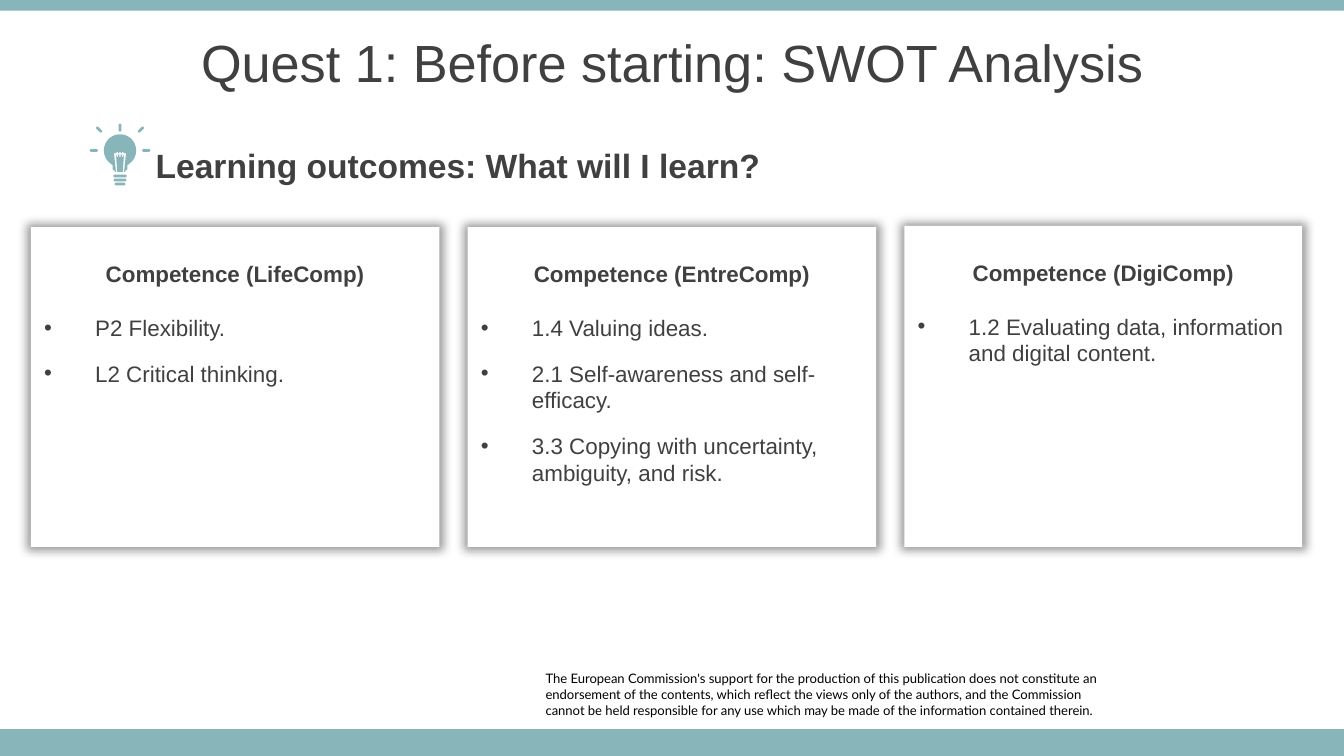
"""Build the learning outcomes slide for the SWOT analysis quest."""
import math

import lxml.etree
import pptx
import pptx.dml.color
import pptx.enum.shapes
import pptx.enum.text
import pptx.oxml.ns
import pptx.util

RGBColor = pptx.dml.color.RGBColor
TEAL = RGBColor(0x87, 0xB5, 0xBA)
GRAY = RGBColor(0x40, 0x40, 0x40)
BLACK = RGBColor(0, 0, 0)
WHITE = RGBColor(255, 255, 255)
ALIGN = pptx.enum.text.PP_ALIGN
ANCHOR = pptx.enum.text.MSO_ANCHOR
RECT = pptx.enum.shapes.MSO_SHAPE.RECTANGLE
Inches = pptx.util.Inches
Pt = pptx.util.Pt

W = 10
H = W * 9 / 16
TITLE = "Quest 1: Before starting: SWOT Analysis"
SUBTITLE = "Learning outcomes: What will I learn?"
DISCLAIMER = [
    "The European Commission's support for the production of this publication does not "
    "constitute an endorsement of the contents, which reflect the views only of the authors, "
    "and the Commission",
    "cannot be held responsible for any use which may be made of the information contained "
    "therein.",
]
CARDS = [
    ("Competence (LifeComp)", ["P2 Flexibility.", "L2 Critical thinking."], 1.69, 3.04),
    ("Competence (EntreComp)",
     ["1.4 Valuing ideas.", "2.1 Self-awareness and self-efficacy.",
      "3.3 Copying with uncertainty, ambiguity, and risk."], 1.69, 3.04),
    ("Competence (DigiComp)",
     ["1.2 Evaluating data, information and digital content."], 1.68, 2.96),
]
CARD_LEFT, CARD_PITCH, CARD_BOTTOM = 0.23, 3.25, 4.07
LINE = 14.3

BULB_X, BULB_Y, BULB_R = 89.3, 112, 12
NECK = [(5.5, 123), (5.5, 126), (3, 128)]
FILAMENT = [(0.5, 113), (0.5, 114), (1.5, 114), (1.5, 113), (2.5, 113), (2.5, 114),
            (4.5, 114), (3, 128), (2, 128), (3, 115), (2.5, 115), (2.5, 117),
            (1.5, 117), (1.5, 115), (0.5, 115), (0.5, 117)]
BASE = [(131, 10), (134, 9.5), (137, 8)]
RAYS = [(0, 19.5, 6), (45, 22, 5.5), (90, 17, 6), (135, 22, 5.5), (180, 19.5, 6)]
FINE = 100


def add_text(tf, text, first=False, size=12, color=GRAY, font="Arial", bold=False,
             align=ALIGN.LEFT, after=0, bullet=False):
    p = tf.paragraphs[0] if first else tf.add_paragraph()
    p.alignment = align
    p.space_after = Pt(after)
    if bullet:
        pPr = p._p.get_or_add_pPr()
        pPr.set("marL", str(Inches(0.38)))
        pPr.set("indent", str(-Inches(0.38)))
        lxml.etree.SubElement(pPr, pptx.oxml.ns.qn("a:buFont"), typeface="Arial")
        lxml.etree.SubElement(pPr, pptx.oxml.ns.qn("a:buChar"), char="•")
    r = p.add_run()
    r.text = text
    r.font.size, r.font.name, r.font.bold = Pt(size), font, bold
    r.font.color.rgb = color


def add_box(slide, x, y, w, h, anchor=ANCHOR.MIDDLE):
    tf = slide.shapes.add_textbox(*map(Inches, (x, y, w, h))).text_frame
    tf.word_wrap = True
    tf.vertical_anchor = anchor
    return tf


def paint(sp, color):
    sp.fill.solid()
    sp.fill.fore_color.rgb = color
    sp.line.fill.background()
    sp.shadow.inherit = False
    return sp


def add_rect(slide, x, y, w, h, color):
    return paint(slide.shapes.add_shape(RECT, *map(Inches, (x, y, w, h))), color)


def add_glow(sp):
    qn = pptx.oxml.ns.qn
    effects = sp._element.spPr.find(qn("a:effectLst"))
    shadow = lxml.etree.SubElement(effects, qn("a:outerShdw"), blurRad=str(Pt(5)),
                                   sx="102000", sy="102000", algn="ctr",
                                   rotWithShape="0")
    color = lxml.etree.SubElement(shadow, qn("a:srgbClr"), val=str(BLACK))
    lxml.etree.SubElement(color, qn("a:alpha"), val="40000")


def pill(cx, cy, length, angle=0, thick=2):
    a, points = math.radians(angle), []
    for side in (1, -1):
        for turn in range(-90, 91, 30):
            t = math.radians(turn)
            u = side * (length / 2 - thick / 2 + thick / 2 * math.cos(t))
            v = side * thick / 2 * math.sin(t)
            points.append((cx + u * math.cos(a) - v * math.sin(a),
                           cy + u * math.sin(a) + v * math.cos(a)))
    return points


def mirrored(half):
    return ([(BULB_X - dx, y) for dx, y in half]
            + [(BULB_X + dx, y) for dx, y in reversed(half)])


def add_bulb(slide):
    arc = [(BULB_X + BULB_R * math.cos(math.radians(d)),
            BULB_Y + BULB_R * math.sin(math.radians(d))) for d in range(-225, 46, 6)]
    outlines = [arc + mirrored(NECK)[::-1], mirrored(FILAMENT)]
    outlines += [pill(BULB_X, y, length) for y, length in BASE]
    for angle, radius, length in RAYS:
        a = math.radians(angle)
        outlines.append(pill(BULB_X + radius * math.cos(a),
                             BULB_Y - radius * math.sin(a), length, -angle))
    outlines = [[(x * FINE, y * FINE) for x, y in points] for points in outlines]
    builder = slide.shapes.build_freeform(*outlines[0][0], scale=Inches(0.01) / FINE)
    for i, points in enumerate(outlines):
        if i:
            builder.move_to(*points[0])
        builder.add_line_segments(points[1:], close=True)
    paint(builder.convert_to_shape(), TEAL)


def add_card(slide, x, y, w, heading, items):
    sp = add_rect(slide, x, y, w, CARD_BOTTOM - y, WHITE)
    add_glow(sp)
    tf = sp.text_frame
    tf.word_wrap = True
    tf.vertical_anchor = ANCHOR.TOP
    tf.margin_top = Inches(0.05) + Pt(LINE)
    add_text(tf, heading, first=True, bold=True, align=ALIGN.CENTER, after=LINE)
    for item in items:
        add_text(tf, item, after=10, bullet=True)


def main():
    prs = pptx.Presentation()
    prs.slide_width, prs.slide_height = Inches(W), Inches(H)
    slide = prs.slides.add_slide(prs.slide_layouts[6])

    tf = add_box(slide, 4.06, 4.99, 4.17, 0.35, ANCHOR.TOP)
    tf.margin_left = tf.margin_right = tf.margin_top = tf.margin_bottom = 0
    for i, text in enumerate(DISCLAIMER):
        add_text(tf, text, first=i == 0, size=7, color=BLACK, font="Lato")

    add_rect(slide, 0, H - 0.2, W, 0.2, TEAL)
    add_rect(slide, 0, 0, W, 0.08, TEAL)
    add_text(add_box(slide, 0, 0.14, W, 0.63), TITLE, first=True, size=28,
             align=ALIGN.CENTER)
    add_bulb(slide)
    add_text(add_box(slide, 1.06, 1.07, 4.88, 0.31), SUBTITLE, first=True, size=18,
             bold=True)
    for i, (heading, items, top, width) in enumerate(CARDS):
        add_card(slide, CARD_LEFT + i * CARD_PITCH, top, width, heading, items)
    prs.save("out.pptx")


if __name__ == "__main__":
    main()
